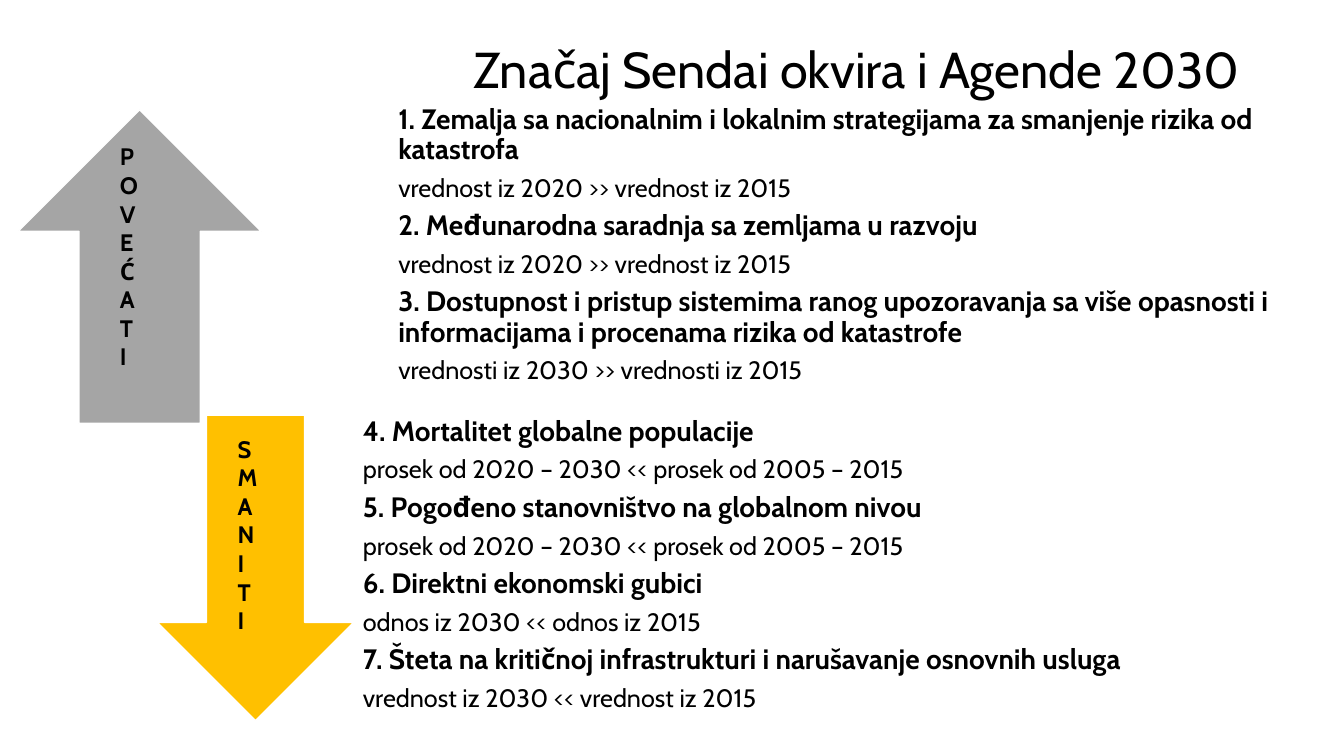
from dataclasses import dataclass

from pptx import Presentation
from pptx.dml.color import RGBColor
from pptx.enum.shapes import MSO_SHAPE
from pptx.enum.text import MSO_ANCHOR, MSO_AUTO_SIZE
from pptx.slide import Slide
from pptx.text.text import TextFrame, _Paragraph
from pptx.util import Pt


@dataclass(frozen=True)
class Theme:
    font: str = "Cabin"
    text: RGBColor = RGBColor(0x00, 0x00, 0x00)
    outline: RGBColor = RGBColor(0xFF, 0xFF, 0xFF)
    increase: RGBColor = RGBColor(0xA5, 0xA5, 0xA5)
    reduce: RGBColor = RGBColor(0xFF, 0xC0, 0x00)
    title_size: int = 36
    target_size: int = 20
    measure_size: int = 18
    label_size: int = 17
    line_spacing: float = 0.9
    space_after: float = 0.35


THEME = Theme()


@dataclass(frozen=True)
class Area:
    left: float
    top: float
    width: float
    height: float

    def lengths(self) -> tuple[Pt, Pt, Pt, Pt]:
        return Pt(self.left), Pt(self.top), Pt(self.width), Pt(self.height)


@dataclass(frozen=True)
class Direction:
    label: str
    label_area: Area
    arrow: MSO_SHAPE
    arrow_area: Area
    color: RGBColor
    text_area: Area
    anchor: MSO_ANCHOR
    targets: tuple[tuple[str, str], ...]  # target and how it is measured


DIRECTIONS = (
    Direction(
        "POVEĆATI", Area(78.5, 98, 39, 209),
        MSO_SHAPE.UP_ARROW, Area(13, 78.5, 173.5, 224), THEME.increase,
        Area(273, 69, 672.5, 224), MSO_ANCHOR.MIDDLE,
        (
            ("1. Zemalja sa nacionalnim i lokalnim strategijama za smanjenje "
             "rizika od katastrofa",
             "vrednost iz 2020 >> vrednost iz 2015"),
            ("2. Međunarodna saradnja sa zemljama u razvoju",
             "vrednost iz 2020 >> vrednost iz 2015"),
            ("3. Dostupnost i pristup sistemima ranog upozoravanja sa više "
             "opasnosti i informacijama i procenama rizika od katastrofe",
             "vrednosti iz 2030 >> vrednosti iz 2015"),
        ),
    ),
    Direction(
        "SMANITI", Area(162.7, 306.7, 39, 218),
        MSO_SHAPE.DOWN_ARROW, Area(112.3, 296.6, 140.4, 218.2), THEME.reduce,
        Area(247.7, 298, 674, 224), MSO_ANCHOR.TOP,
        (
            ("4. Mortalitet globalne populacije",
             "prosek od 2020 – 2030 << prosek od 2005 – 2015"),
            ("5. Pogođeno stanovništvo na globalnom nivou",
             "prosek od 2020 – 2030 << prosek od 2005 – 2015"),
            ("6. Direktni ekonomski gubici",
             "odnos iz 2030 << odnos iz 2015"),
            ("7. Šteta na kritičnoj infrastrukturi i narušavanje osnovnih usluga",
             "vrednost iz 2030 << vrednost iz 2015"),
        ),
    ),
)


def write(para: _Paragraph, text: str, size: int, bold: bool = False) -> None:
    para.text = text
    for span in para.runs:
        span.font.name = THEME.font
        span.font.size = Pt(size)
        span.font.bold = bold
        span.font.color.rgb = THEME.text


def add_frame(page: Slide, area: Area, anchor: MSO_ANCHOR) -> TextFrame:
    frame = page.shapes.add_textbox(*area.lengths()).text_frame
    frame.word_wrap = True
    frame.vertical_anchor = anchor
    return frame


def add_title(page: Slide, text: str) -> None:
    frame = add_frame(page, Area(331, 15, 595.5, 73.5), MSO_ANCHOR.MIDDLE)
    write(frame.paragraphs[0], text, THEME.title_size)
    frame.paragraphs[0].line_spacing = THEME.line_spacing


def add_arrow(page: Slide, direction: Direction) -> None:
    arrow = page.shapes.add_shape(direction.arrow, *direction.arrow_area.lengths())
    arrow.shadow.inherit = False
    arrow.fill.solid()
    arrow.fill.fore_color.rgb = direction.color
    arrow.line.color.rgb = THEME.outline
    arrow.line.width = Pt(1)


def add_targets(page: Slide, direction: Direction) -> None:
    frame = add_frame(page, direction.text_area, direction.anchor)
    frame.margin_left = frame.margin_right = frame.margin_bottom = Pt(11.5)
    frame.margin_top = Pt(0)
    lines = [
        line
        for target, measure in direction.targets
        for line in ((target, THEME.target_size, True),
                     (measure, THEME.measure_size, False))
    ]
    for index, (text, size, bold) in enumerate(lines):
        para = frame.add_paragraph() if index else frame.paragraphs[0]
        write(para, text, size, bold)
        para.line_spacing = THEME.line_spacing
        para.space_after = Pt(size * THEME.space_after)


def add_label(page: Slide, direction: Direction) -> None:
    frame = add_frame(page, direction.label_area, MSO_ANCHOR.TOP)
    frame.auto_size = MSO_AUTO_SIZE.SHAPE_TO_FIT_TEXT
    write(frame.paragraphs[0], direction.label, THEME.label_size, True)
    # Stack the upright letters from top to bottom
    frame._txBody.bodyPr.set("vert", "wordArtVert")


def main() -> None:
    deck = Presentation()
    deck.slide_width, deck.slide_height = Pt(960), Pt(540)
    page = deck.slides.add_slide(deck.slide_layouts[6])

    # Arrows with their targets
    for direction in DIRECTIONS:
        add_arrow(page, direction)
        add_targets(page, direction)

    # Labels on the arrows
    for direction in DIRECTIONS:
        add_label(page, direction)

    # Title
    add_title(page, "Značaj Sendai okvira i Agende 2030")

    deck.save("out.pptx")


if __name__ == "__main__":
    main()
